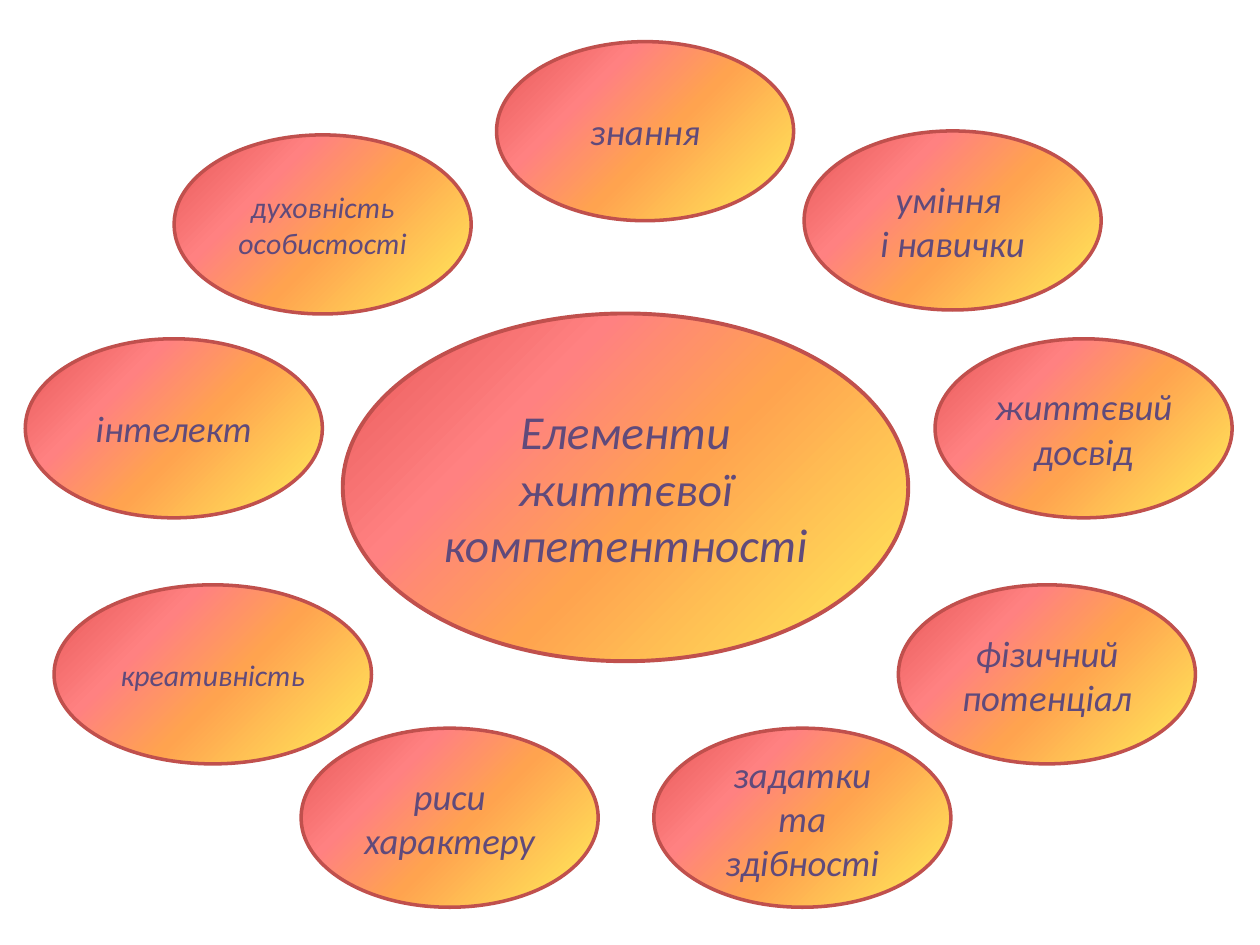
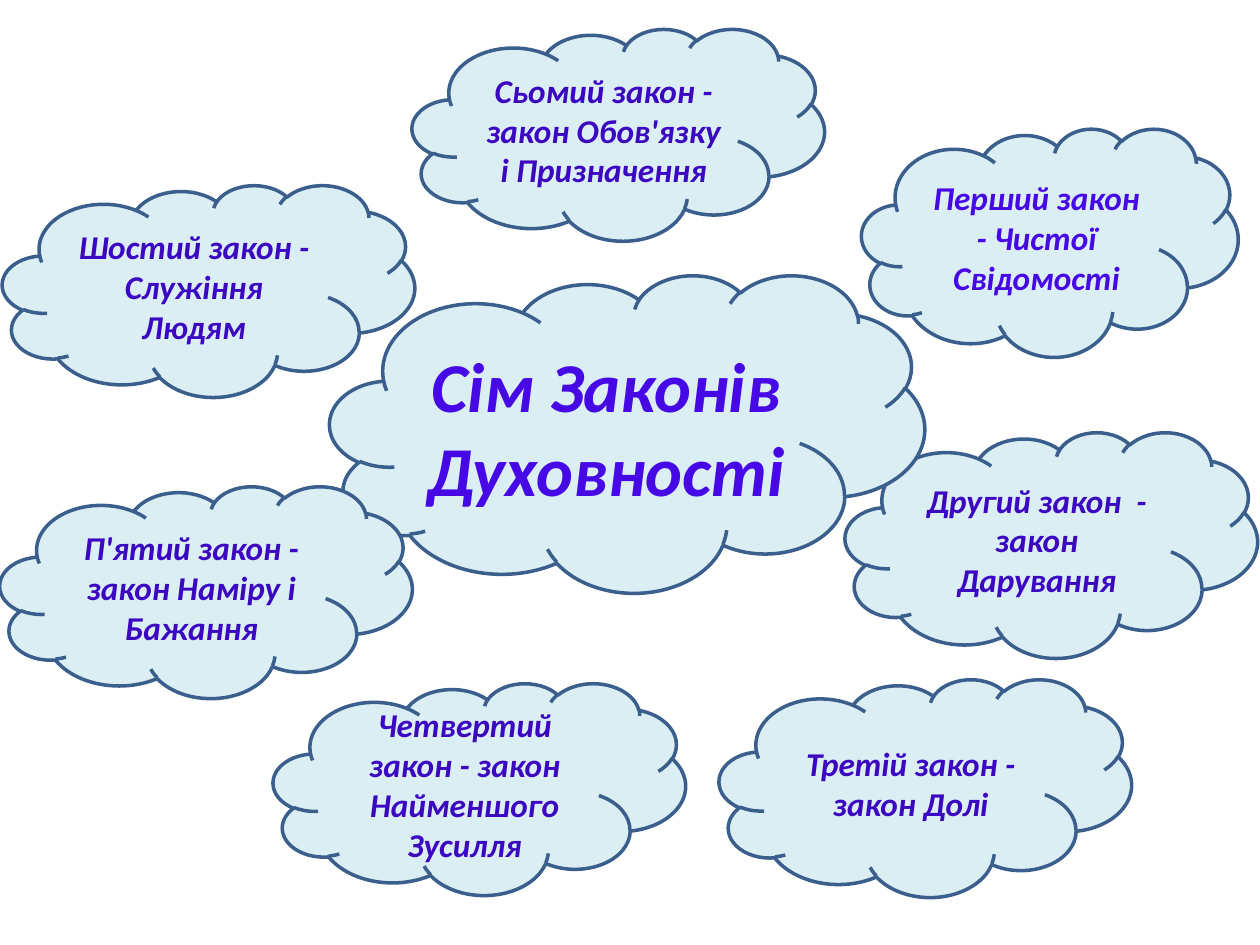
"""Builds two concept maps: life competence elements and seven laws of spirituality."""
from pptx import Presentation
from pptx.dml.color import RGBColor
from pptx.enum.shapes import MSO_SHAPE
from pptx.enum.text import MSO_ANCHOR, PP_ALIGN
from pptx.oxml import parse_xml
from pptx.oxml.ns import nsdecls, qn
from pptx.util import Cm, Pt

FONT = "Calibri"
RED = RGBColor(0xC0, 0x50, 0x4D)
PURPLE = RGBColor(0x60, 0x4A, 0x7B)
PALE_BLUE = RGBColor(0xDB, 0xEE, 0xF4)
STEEL = RGBColor(0x3A, 0x5F, 0x8C)
VIOLET = RGBColor(0x47, 0x08, 0xE6)
INDIGO = RGBColor(0x3C, 0x07, 0xC1)
GREY = RGBColor(0xD9, 0xD9, 0xD9)
LIGHT_GREY = RGBColor(0xF2, 0xF2, 0xF2)
SUNSET = [
    (0, RGBColor(0xFF, 0xEF, 0x5B)),
    (45, RGBColor(0xFF, 0xA3, 0x4F)),
    (70, RGBColor(0xFF, 0x81, 0x81)),
    (100, RGBColor(0xE6, 0x54, 0x54)),
]


def sunset_fill(sp):
    stops = "".join(
        f'<a:gs pos="{pos * 1000}"><a:srgbClr val="{color}"/></a:gs>' for pos, color in SUNSET
    )
    sp.fill.gradient()
    spPr = sp._element.spPr
    spPr.replace(spPr.find(qn("a:gradFill")), parse_xml(
        f'<a:gradFill {nsdecls("a")} rotWithShape="1"><a:gsLst>{stops}</a:gsLst>'
        '<a:path path="circle"><a:fillToRect l="100000" t="100000"/></a:path></a:gradFill>'
    ))


def add_bubble(s, kind, text, box, *, size, color, line, weight=2, fill=None, bold=False,
               outline=None):
    sp = s.shapes.add_shape(kind, *[Cm(v) for v in box])
    sp.shadow.inherit = False
    sp.line.color.rgb = line
    sp.line.width = Pt(weight)
    if fill is None:
        sunset_fill(sp)
    else:
        sp.fill.solid()
        sp.fill.fore_color.rgb = fill
    tf = sp.text_frame
    tf.word_wrap = True
    tf.vertical_anchor = MSO_ANCHOR.MIDDLE
    tf.text = text
    for p in tf.paragraphs:
        p.alignment = PP_ALIGN.CENTER
        for r in p.runs:
            r.font.name = FONT
            r.font.size = Pt(size)
            r.font.bold = bold
            r.font.italic = True
            r.font.color.rgb = color
            if outline is not None:
                r.font._element.insert(0, parse_xml(
                    f'<a:ln {nsdecls("a")} w="{Pt(0.75)}"><a:solidFill>'
                    f'<a:srgbClr val="{outline}"/></a:solidFill></a:ln>'
                ))


prs = Presentation()
prs.slide_width = Cm(25.4)
prs.slide_height = Cm(19.05)
blank = prs.slide_layouts[6]

s = prs.slides.add_slide(blank)
add_bubble(s, MSO_SHAPE.OVAL, "Елементи життєвої компетентності", (6.91, 6.32, 11.4, 7.01),
           size=27, color=PURPLE, line=RED, weight=2.25)
elements = [
    ("духовність особистості", 3.51, 2.72, 5.99, 17),
    ("знання", 10.01, 0.84, 5.99, 21),
    ("інтелект", 0.51, 6.83, 5.99, 21),
    ("уміння \nі навички", 16.21, 2.64, 5.99, 21),
    ("життєвий досвід", 18.85, 6.83, 5.99, 21),
    ("креативність", 1.09, 11.79, 6.4, 17),
    ("задатки та здібності", 13.18, 14.68, 5.99, 21),
    ("фізичний потенціал", 18.11, 11.79, 5.99, 21),
    ("риси характеру", 6.07, 14.68, 5.99, 21),
]
for text, left, top, width, size in elements:
    add_bubble(s, MSO_SHAPE.OVAL, text, (left, top, width, 3.61),
               size=size, color=PURPLE, line=RED)

s = prs.slides.add_slide(blank)
laws = [
    ("Перший закон - Чистої Свідомості", (17.37, 2.59, 7.59, 4.6), 19, VIOLET, GREY),
    ("Другий закон  - закон Дарування", (17.04, 8.71, 8.31, 4.55), 19, INDIGO, GREY),
    ("Третій закон - закон Долі", (14.5, 13.69, 8.31, 4.39), 19, INDIGO, GREY),
    ("Четвертий закон - закон Найменшого Зусилля", (5.51, 13.77, 8.31, 4.27), 19, INDIGO, GREY),
    ("Сім Законів Духовності", (6.65, 5.54, 11.99, 6.4), 40, VIOLET, LIGHT_GREY),
    ("П'ятий закон - закон Наміру і Бажання", (0, 9.8, 8.31, 4.27), 19, INDIGO, GREY),
    ("Шостий закон - Служіння Людям", (0.05, 3.73, 8.31, 4.27), 19, INDIGO, GREY),
    ("Сьомий закон - закон Обов'язку і Призначення", (8.31, 0.58, 8.31, 4.27), 19, INDIGO, GREY),
]
for text, box, size, color, outline in laws:
    add_bubble(s, MSO_SHAPE.CLOUD, text, box, size=size, color=color, line=STEEL,
               fill=PALE_BLUE, bold=True, outline=outline)

prs.save("out.pptx")
